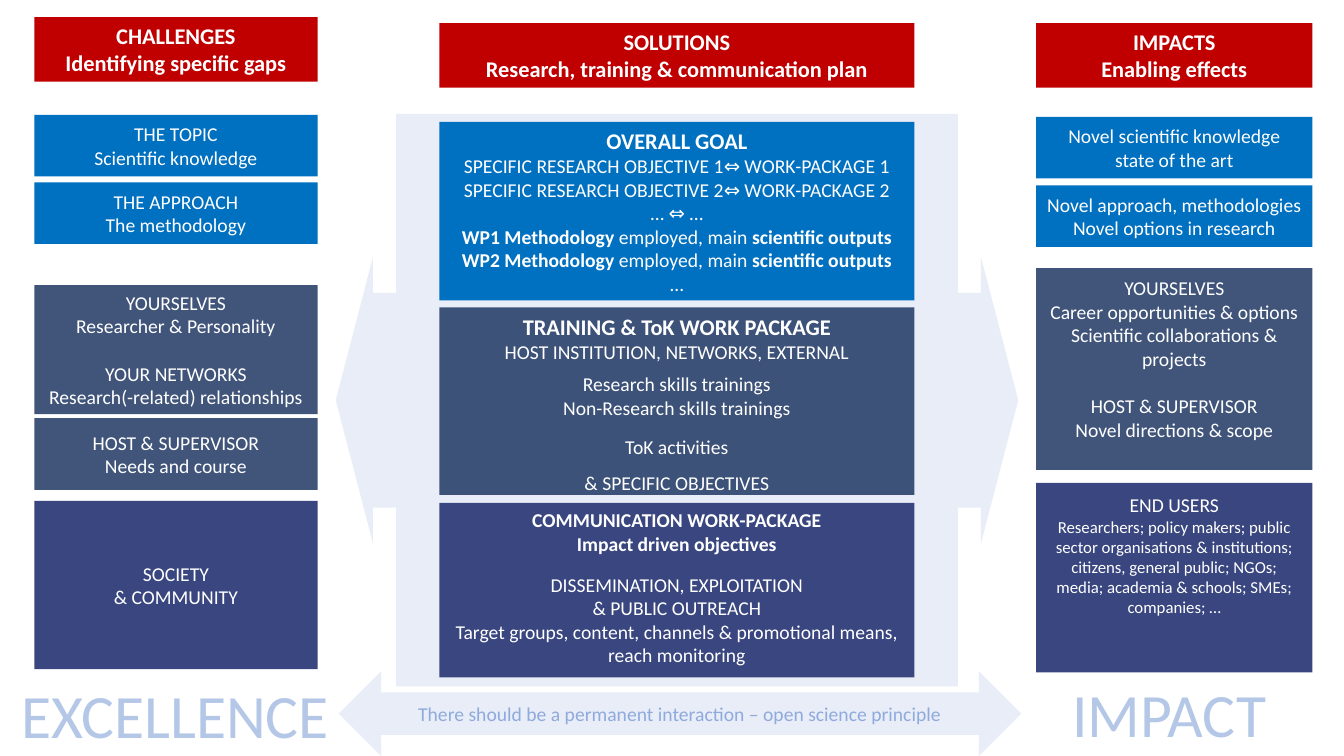
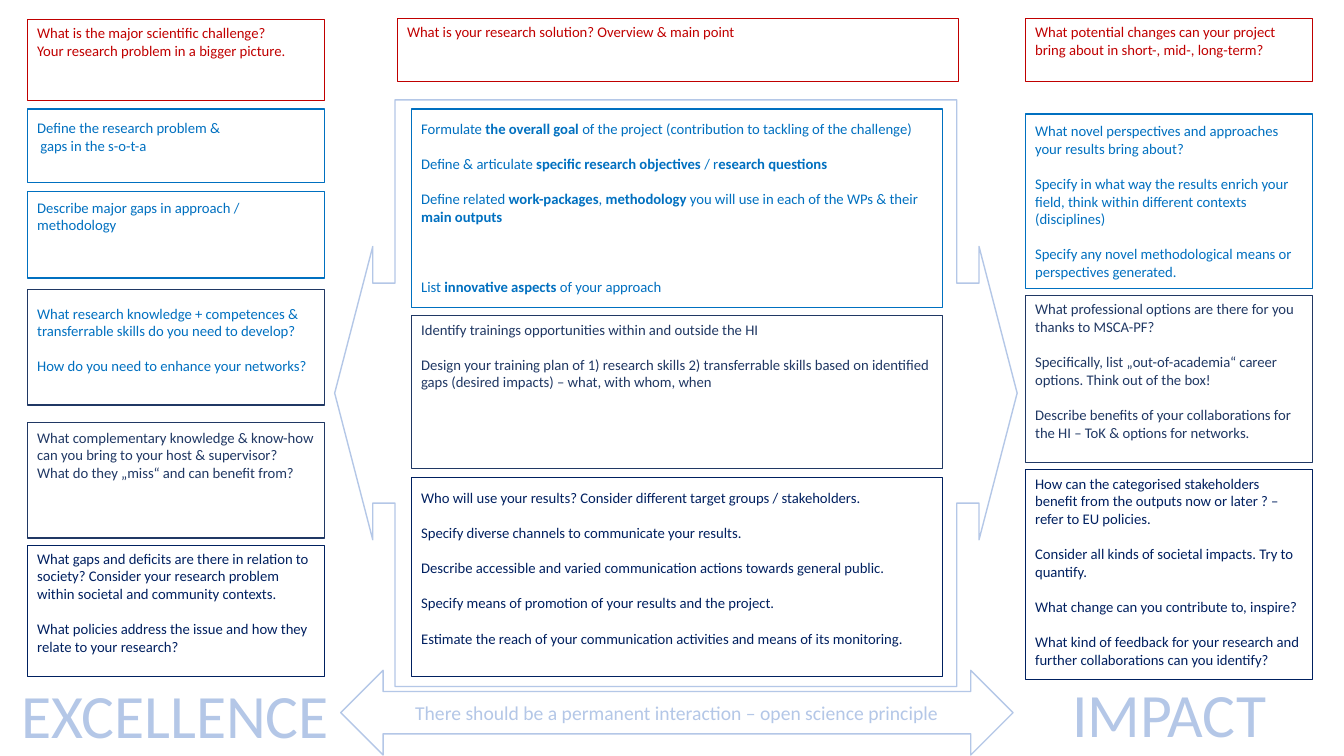
from dataclasses import dataclass, replace
from typing import NamedTuple

from lxml import etree
from pptx import Presentation
from pptx import util as u
from pptx.dml.color import RGBColor
from pptx.enum import shapes, text
from pptx.oxml.ns import qn


# Theme: colours and type sizes
@dataclass(frozen=True)
class Theme:
    font: str = "Calibri"
    white: str = "FFFFFF"
    red: str = "C00000"
    blue: str = "0070C0"
    slate: str = "203864"
    indigo: str = "39467F"
    navy: str = "002060"
    pale: str = "DAE3F3"
    sky: str = "B4C7E7"
    steel: str = "8FAADC"
    huge: float = 44
    head: float = 16
    body: float = 14
    small: float = 12
    note: float = 10.5
    skip: float = 12.5  # space that parts two notes, in points


T = Theme()


@dataclass(frozen=True)
class Look:
    ink: str
    size: float
    fill: str = ""
    alpha: int = 100
    line: str = ""
    width: float = 1
    mid: bool = False  # centred across


class Line(NamedTuple):
    text: str  # parts between asterisks are bold
    gap: float = 0
    size: float = 0


class Area(NamedTuple):
    """Shares of the slide's width and height, in percent."""
    x: float
    y: float
    w: float
    h: float


class Block(NamedTuple):
    y: float
    h: float
    look: Look
    lines: list[Line]
    inset: float | None = 0.05  # top margin in inches; None centres the text


class Col(NamedTuple):
    x: float
    w: float
    blocks: list[Block]


class Page(NamedTuple):
    call: Area
    arrow: Area
    frame: Look
    cols: list[Col]


# Looks: filled blocks and outlined blocks
RED = Look(T.white, T.head, T.red, mid=True)
BLUE = Look(T.white, T.body, T.blue, mid=True)
SLATE = replace(BLUE, fill=T.slate, alpha=85)
INDIGO = replace(BLUE, fill=T.indigo)
ASK_RED = Look(T.red, T.note, T.white, line=T.red, width=0.75)
ASK_BLUE = Look(T.blue, T.note, T.white, line=T.blue)
ASK_SLATE = Look(T.slate, T.note, T.white, line=T.slate)
ASK_SKILL = replace(ASK_SLATE, ink=T.blue)
ASK_NAVY = Look(T.navy, T.note, line=T.navy)
SOLID = Look(T.steel, T.body, T.pale, alpha=61, mid=True)
OPEN = Look(T.sky, T.body, line=T.sky, mid=True)
WORD = Look(T.sky, T.huge)

WORDS = [("EXCELLENCE", Area(0.83, 88.93, 25.2, 11.07)),
         ("IMPACT", Area(79.05, 88.8, 17.33, 11.2))]
MOTTO = "There should be a permanent interaction – open science principle"


def rows(*texts: str) -> list[Line]:
    return [Line(t) for t in texts]


def notes(*texts: str) -> list[Line]:
    return [Line(t, T.skip if i else 0) for i, t in enumerate(texts)]


# Content of the two pages
PLAN = Page(Area(24.98, 15.07, 50.78, 75.73), Area(25.2, 88.8, 50.78, 11.2), SOLID, [
    Col(2.55, 21.08, [
        Block(2.27, 8.53, RED, rows("*CHALLENGES*", "*Identifying specific gaps*")),
        Block(15.2, 8.13, BLUE, rows("THE TOPIC", "Scientific knowledge"), None),
        Block(24.13, 8.13, BLUE, rows("THE APPROACH", "The methodology"), None),
        Block(37.73, 17.07, SLATE, [
            Line("YOURSELVES"), Line("Researcher & Personality"),
            Line("YOUR NETWORKS", 17), Line("Research(-related) relationships")], None),
        Block(55.33, 9.47, SLATE, rows("HOST & SUPERVISOR", "Needs and course"), None),
        Block(66.27, 22.27, INDIGO, rows("SOCIETY", "& COMMUNITY"), None),
    ]),
    Col(32.7, 35.33, [
        Block(3.07, 8.53, RED, rows("*SOLUTIONS*", "*Research, training & communication plan*")),
        Block(16.13, 23.6, BLUE, [Line("*OVERALL GOAL*", size=T.head)] + rows(
            "SPECIFIC RESEARCH OBJECTIVE 1⇔ WORK-PACKAGE 1",
            "SPECIFIC RESEARCH OBJECTIVE 2⇔ WORK-PACKAGE 2",
            "… ⇔ …",
            "*WP1 Methodology* employed, main *scientific outputs*",
            "*WP2 Methodology* employed, main *scientific outputs*",
            "…"), None),
        Block(40.67, 24.8, SLATE, [
            Line("*TRAINING & ToK WORK PACKAGE*", size=T.head),
            Line("HOST INSTITUTION, NETWORKS, EXTERNAL"),
            Line("Research skills trainings", 6), Line("Non-Research skills trainings"),
            Line("ToK activities", 11), Line("& SPECIFIC OBJECTIVES", 9)], 0.06),
        Block(66.53, 23.07, INDIGO, [
            Line("*COMMUNICATION WORK-PACKAGE*"), Line("*Impact driven objectives*"),
            Line("DISSEMINATION, EXPLOITATION", 12.5), Line("& PUBLIC OUTREACH"),
            Line("Target groups, content, channels & promotional means, reach monitoring")]),
    ]),
    Col(77.1, 20.55, [
        Block(3.07, 8.53, RED, rows("*IMPACTS*", "*Enabling effects*")),
        Block(15.47, 8.13, BLUE, rows("Novel scientific knowledge", "state of the art"), None),
        Block(24.53, 8.13, BLUE, rows(
            "Novel approach, methodologies", "Novel options in research"), None),
        Block(35.47, 26.67, SLATE, [
            Line("YOURSELVES"), Line("Career opportunities & options"),
            Line("Scientific collaborations & projects"),
            Line("HOST & SUPERVISOR", 17), Line("Novel directions & scope")], 0.08),
        Block(63.87, 25.07, INDIGO, [Line("END USERS"), Line(
            "Researchers; policy makers; public sector organisations & institutions; "
            "citizens, general public; NGOs; media; academia & schools; SMEs; "
            "companies; …", size=T.small)], 0.1),
    ]),
])

GUIDE = Page(Area(24.9, 13.2, 50.78, 77.6), Area(25.35, 88.67, 50.03, 11.2), OPEN, [
    Col(2.03, 22.13, [
        Block(2.53, 10.8, ASK_RED, rows(
            "What is the major scientific challenge?",
            "Your research problem in a bigger picture.")),
        Block(14.4, 9.73, ASK_BLUE, rows(
            "Define the research problem &", " gaps in the s-o-t-a"), 0.1),
        Block(25.33, 11.47, ASK_BLUE, rows(
            "Describe major gaps in approach / methodology"), 0.07),
        Block(38.27, 15.33, ASK_SKILL, notes(
            "What research knowledge + competences & transferrable skills do you need to develop?",
            "How do you need to enhance your networks?"), 0.15),
        Block(55.87, 15.33, ASK_SLATE, rows(
            "What complementary knowledge & know-how can you bring to your host & supervisor?",
            "What do they „miss“ and can benefit from?"), 0.06),
        Block(72.13, 17.33, ASK_NAVY, notes(
            "What gaps and deficits are there in relation to society? Consider your "
            "research problem within societal and community contexts.",
            "What policies address the issue and how they relate to your research?"), 0.04),
    ]),
    Col(29.55, 41.78, [
        Block(2.4, 8.4, ASK_RED, rows("What is your research solution? Overview & main point")),
    ]),
    Col(30.6, 39.53, [
        Block(14.4, 26.27, ASK_BLUE, notes(
            "Formulate *the overall goal *of the project (contribution to tackling of the challenge)",
            "Define & articulate *specific research objectives */ r*esearch questions*",
            "Define related *work-packages*, *methodology* you will use in each of the WPs "
            "& their *main outputs*") + [
            Line("List *innovative aspects *of your approach", 3 * T.skip)], 0.11),
        Block(41.73, 20.27, ASK_SLATE, notes(
            "Identify trainings opportunities within and outside the HI",
            "Design your training plan of 1) research skills 2) transferrable skills based "
            "on identified gaps (desired impacts) – what, with whom, when")),
        Block(63.2, 26.27, ASK_NAVY, notes(
            "Who will use your results? Consider different target groups / stakeholders.",
            "Specify diverse channels to communicate your results.",
            "Describe accessible and varied communication actions towards general public.",
            "Specify means of promotion of your results and the project.",
            "Estimate the reach of your communication activities and means of its monitoring."),
            0.11),
    ]),
    Col(76.28, 21.38, [
        Block(2.4, 8.4, ASK_RED, rows(
            "What potential changes can your project bring about in short-, mid-, long-term?")),
        Block(15.07, 23.07, ASK_BLUE, notes(
            "What novel perspectives and approaches your results bring about?",
            "Specify in what way the results enrich your field, think within different "
            "contexts (disciplines)",
            "Specify any novel methodological means or perspectives generated."), 0.08),
        Block(39.07, 22.13, ASK_SLATE, notes(
            "What professional options are there for you thanks to MSCA-PF?",
            "Specifically, list „out-of-academia“ career options. Think out of the box!",
            "Describe benefits of your collaborations for the HI – ToK & options for networks.")),
        Block(62.13, 27.73, ASK_NAVY, notes(
            "How can the categorised stakeholders benefit from the outputs now or later ? – "
            "refer to EU policies.",
            "Consider all kinds of societal impacts. Try to quantify.",
            "What change can you contribute to, inspire?",
            "What kind of feedback for your research and further collaborations can you identify?")),
    ]),
])

# Drawing
WIDE, HIGH = u.Inches(13.33), u.Inches(7.5)
KIND = shapes.MSO_SHAPE


def place(a: Area) -> tuple[int, int, int, int]:
    return (int(a.x * WIDE / 100), int(a.y * HIGH / 100),
            int(a.w * WIDE / 100), int(a.h * HIGH / 100))


def write(shape, look: Look, lines: list[Line], inset: float | None = 0.05) -> None:
    frame = shape.text_frame
    frame.word_wrap = True
    frame.vertical_anchor = text.MSO_ANCHOR.MIDDLE if inset is None else text.MSO_ANCHOR.TOP
    frame.margin_top = u.Inches(0.05 if inset is None else inset)
    for i, line in enumerate(lines):
        para = frame.paragraphs[0] if i == 0 else frame.add_paragraph()
        para.alignment = text.PP_ALIGN.CENTER if look.mid else text.PP_ALIGN.LEFT
        if line.gap:
            para.space_before = u.Pt(line.gap)
        for j, part in enumerate(line.text.split("*")):
            if not part:
                continue
            run = para.add_run()
            run.text = part
            run.font.name = T.font
            run.font.size = u.Pt(line.size or look.size)
            run.font.bold = j % 2 == 1
            run.font.color.rgb = RGBColor.from_string(look.ink)


def draw(slide, kind: shapes.MSO_SHAPE, area: Area, look: Look):
    shape = slide.shapes.add_shape(kind, *place(area))
    shape.shadow.inherit = False
    if look.fill:
        shape.fill.solid()
        shape.fill.fore_color.rgb = RGBColor.from_string(look.fill)
        if look.alpha < 100:
            tint = shape._element.spPr.find(".//" + qn("a:srgbClr"))
            etree.SubElement(tint, qn("a:alpha")).set("val", str(look.alpha * 1000))
    else:
        shape.fill.background()
    if look.line:
        shape.line.color.rgb = RGBColor.from_string(look.line)
        shape.line.width = u.Pt(look.width)
    else:
        shape.line.fill.background()
    return shape


def build(deck, page: Page) -> None:
    slide = deck.slides.add_slide(deck.slide_layouts[6])
    # Backdrop arrows
    call = draw(slide, KIND.LEFT_RIGHT_ARROW_CALLOUT, page.call, page.frame)
    for i, share in enumerate((0.375, 0.25, 0.065, 0.823)):
        call.adjustments[i] = share
    arrow = draw(slide, KIND.LEFT_RIGHT_ARROW, page.arrow, page.frame)
    write(arrow, page.frame, rows(MOTTO), None)
    # Corner words
    for word, area in WORDS:
        write(slide.shapes.add_textbox(*place(area)), WORD, rows(word))
    # Columns of blocks
    for col in page.cols:
        for b in col.blocks:
            box = draw(slide, KIND.RECTANGLE, Area(col.x, b.y, col.w, b.h), b.look)
            write(box, b.look, b.lines, b.inset)


def main() -> None:
    deck = Presentation()
    deck.slide_width, deck.slide_height = WIDE, HIGH
    for page in (PLAN, GUIDE):
        build(deck, page)
    deck.save("out.pptx")


if __name__ == "__main__":
    main()
